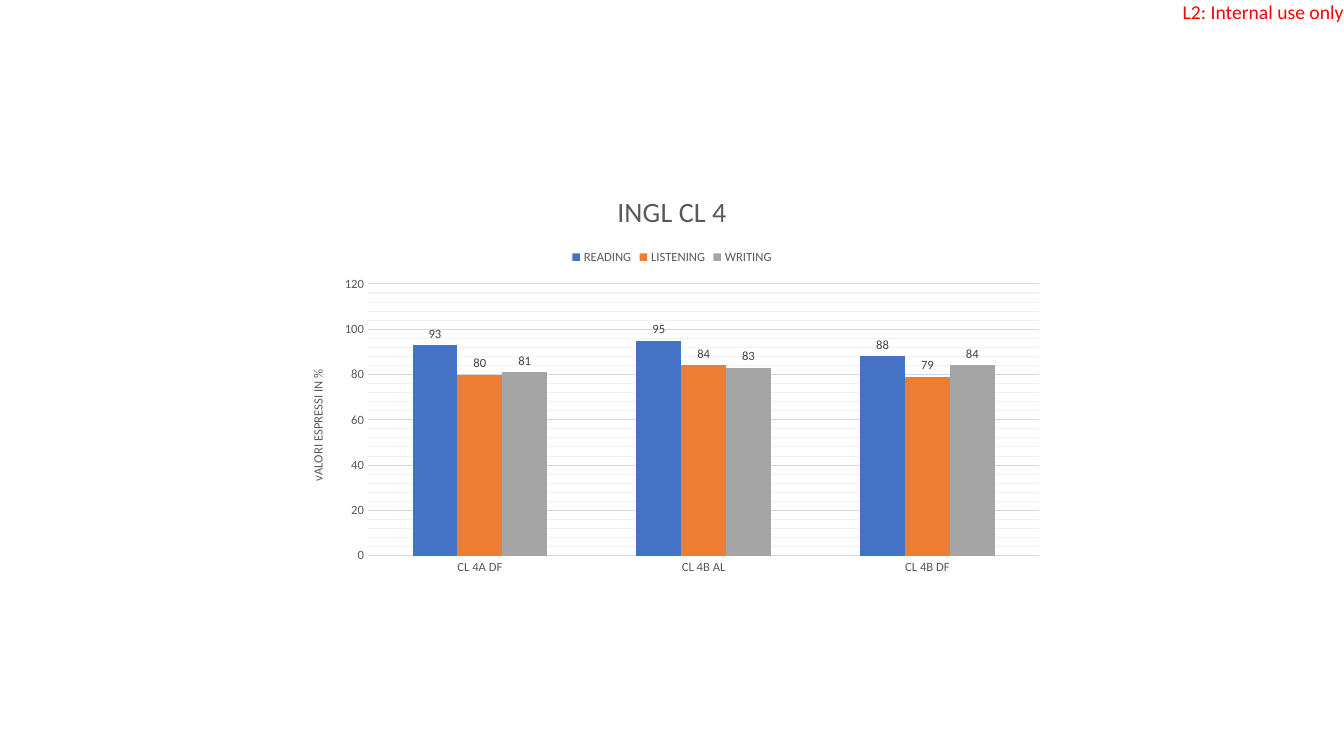
from copy import deepcopy

from pptx import Presentation
from pptx.chart.data import CategoryChartData
from pptx.dml.color import RGBColor
from pptx.enum.chart import XL_CHART_TYPE, XL_LABEL_POSITION, XL_LEGEND_POSITION, XL_TICK_MARK
from pptx.oxml.ns import qn
from pptx.util import Inches, Pt

COLUMNS = XL_CHART_TYPE.COLUMN_CLUSTERED
OUTSIDE = XL_LABEL_POSITION.OUTSIDE_END
TOP = XL_LEGEND_POSITION.TOP
NO_TICK = XL_TICK_MARK.NONE

GREY = "595959"
W, H = 13.33, 7.5


def rgb(value):
    return RGBColor.from_string(value)


def style(font, size, color):
    font.name = "Calibri"
    font.size = Pt(size)
    font.bold = False
    font.color.rgb = rgb(color)


prs = Presentation()
prs.slide_width, prs.slide_height = Inches(W), Inches(H)
s = prs.slides.add_slide(prs.slide_layouts[6])

# Classification mark in the top right corner
mark = s.shapes.add_textbox(Inches(0.88 * W), 0, Inches(0.123 * W), Inches(0.03 * H))
tf = mark.text_frame
tf.word_wrap = False
tf.margin_left = tf.margin_top = tf.margin_right = tf.margin_bottom = 0
r = tf.paragraphs[0].add_run()
r.text = "L2: Internal use only"
style(r.font, 14, "FF0000")

# Chart data
scores = [
    ("READING", (93, 95, 88), "4472C4"),
    ("LISTENING", (80, 84, 79), "ED7D31"),
    ("WRITING", (81, 83, 84), "A5A5A5"),
]
data = CategoryChartData(number_format="0")
data.categories = ["CL 4A DF", "CL 4B AL", "CL 4B DF"]
for name, values, color in scores:
    data.add_series(name, values)

# Chart, centred on the slide
cw, ch = 7.59, 4.06
chart = s.shapes.add_chart(COLUMNS, Inches((W - cw) / 2), Inches((H - ch) / 2),
                           Inches(cw), Inches(ch), data).chart
style(chart.font, 10, "000000")
cat, val = chart.category_axis, chart.value_axis

# Chart title and value axis title
chart.has_title = val.has_title = True
for title, text, size in ((chart.chart_title, "INGL CL 4", 20),
                          (val.axis_title, "vALORI ESPRESSI IN %", 9)):
    r = title.text_frame.paragraphs[0].add_run()
    r.text = text
    style(r.font, size, GREY)

# Legend
chart.has_legend = True
chart.legend.position = TOP
chart.legend.include_in_layout = False
style(chart.legend.font, 9, GREY)

# Axes and major gridlines
for axis in (cat, val):
    axis.major_tick_mark = axis.minor_tick_mark = NO_TICK
    style(axis.tick_labels.font, 9, GREY)
val.minimum_scale, val.maximum_scale = 0, 120
val.major_unit, val.minor_unit = 20, 4
val.has_major_gridlines = val.has_minor_gridlines = True
val.tick_labels.number_format = "0"
val.tick_labels.number_format_is_linked = False
val.format.line.fill.background()
for line in (cat.format.line, val.major_gridlines.format.line):
    line.color.rgb = rgb("D9D9D9")
    line.width = Pt(0.75)

# Minor gridlines: the major line in a lighter grey
major = val._element.find(qn("c:majorGridlines"))
minor = val._element.find(qn("c:minorGridlines"))
minor.append(deepcopy(major.find(qn("c:spPr"))))
for clr in minor.iter(qn("a:srgbClr")):
    clr.set("val", "F2F2F2")

# Columns and their labels
plot = chart.plots[0]
plot.gap_width, plot.overlap = 199, 0
plot.vary_by_categories = False
for series, (name, values, color) in zip(plot.series, scores):
    series.format.fill.solid()
    series.format.fill.fore_color.rgb = rgb(color)
    labels = series.data_labels
    labels.show_value = True
    labels.position = OUTSIDE
    labels.number_format = "0"
    labels.number_format_is_linked = False
    style(labels.font, 9, "404040")

prs.save("out.pptx")
